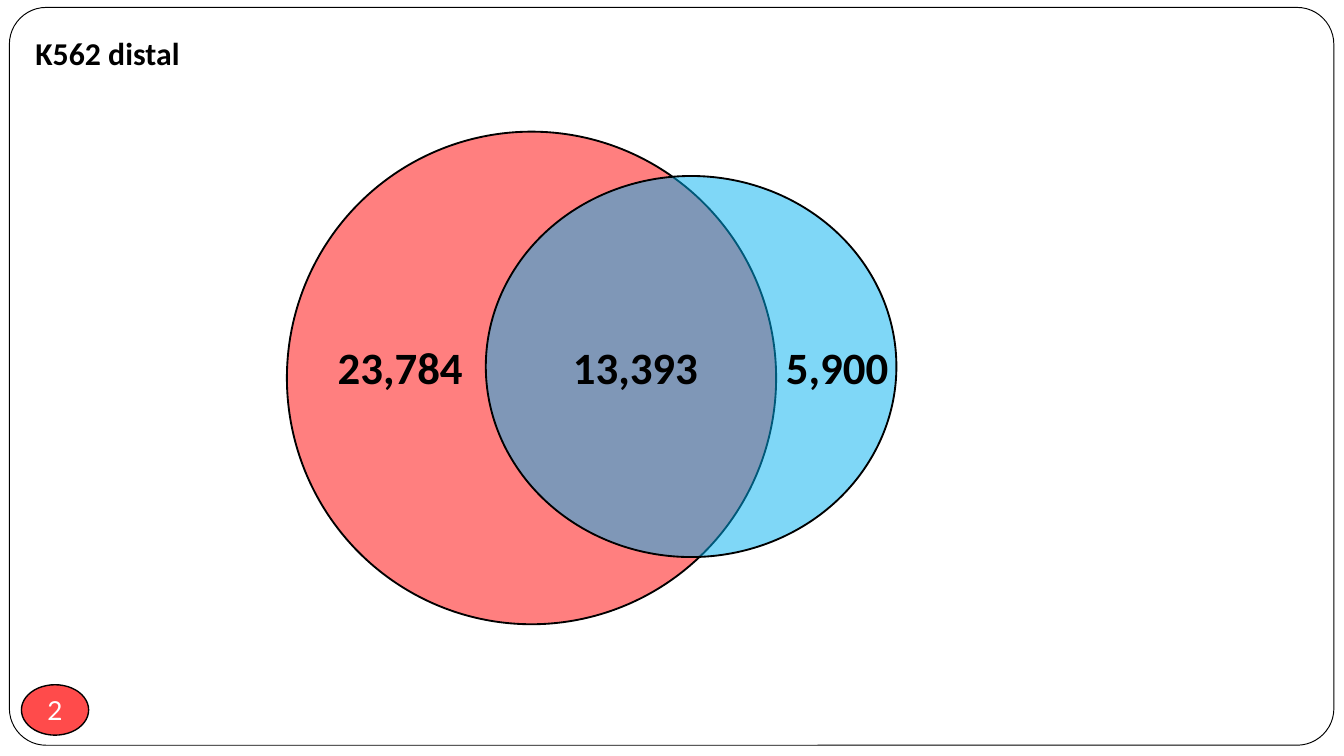
from lxml import etree
from pptx import Presentation
from pptx import util as u
from pptx.dml.color import RGBColor
from pptx.enum import shapes, text
from pptx.oxml.ns import qn

PX = 4572
BLACK = RGBColor(0x00, 0x00, 0x00)
WHITE = RGBColor(0xFF, 0xFF, 0xFF)
RED = RGBColor(0xFF, 0x00, 0x00)
BLUE = RGBColor(0x00, 0xB0, 0xF0)
BADGE_RED = RGBColor(0xFF, 0x4B, 0x4B)


class SlideBuilder:
    """Draws styled elements on the current slide, with 200 px to the inch."""

    def __init__(self, page, font="Calibri", badge_font="Lato"):
        self.page = page
        self.font = font
        self.badge_font = badge_font

    def shape(self, kind, bounds, fill, line_width, opacity=100):
        shape = self.page.shapes.add_shape(kind, *(n * PX for n in bounds))
        shape.shadow.inherit = False
        shape.fill.solid()
        shape.fill.fore_color.rgb = fill
        shape.line.color.rgb = BLACK
        shape.line.width = u.Pt(line_width)
        if opacity < 100:
            color = shape.element.spPr.find(qn("a:solidFill")).find(qn("a:srgbClr"))
            etree.SubElement(color, qn("a:alpha"), val=str(opacity * 1000))
        return shape

    def frame(self, bounds, corner):
        frame = self.shape(shapes.MSO_SHAPE.ROUNDED_RECTANGLE, bounds, WHITE, 0.5)
        frame.adjustments[0] = corner

    def circle(self, bounds, fill):
        self.shape(shapes.MSO_SHAPE.OVAL, bounds, fill, 1, opacity=50)

    def badge(self, bounds, words):
        badge = self.shape(shapes.MSO_SHAPE.OVAL, bounds, BADGE_RED, 0.75)
        frame = badge.text_frame
        frame.margin_left = frame.margin_right = 0
        frame.margin_top = frame.margin_bottom = 0
        frame.vertical_anchor = text.MSO_ANCHOR.MIDDLE
        frame.word_wrap = False
        para = frame.paragraphs[0]
        para.alignment = text.PP_ALIGN.CENTER
        self.span(para, words, self.badge_font, 14, WHITE)

    def label(self, bounds, words, size):
        box = self.page.shapes.add_textbox(*(n * PX for n in bounds))
        box.text_frame.word_wrap = False
        box.text_frame.auto_size = text.MSO_AUTO_SIZE.SHAPE_TO_FIT_TEXT
        self.span(box.text_frame.paragraphs[0], words, self.font, size, BLACK, bold=True)

    def span(self, para, words, font, size, color, bold=False):
        span = para.add_run()
        span.text = words
        span.font.name = font
        span.font.size = u.Pt(size)
        span.font.bold = bold
        span.font.color.rgb = color


def main():
    deck = Presentation()
    deck.slide_width, deck.slide_height = 2000 * PX, 1125 * PX
    builder = SlideBuilder(deck.slides.add_slide(deck.slide_layouts[6]))

    builder.frame((14, 11, 1971, 1098), 0.05)
    builder.badge((32, 1019, 100, 75), "2")
    builder.circle((427, 196, 728, 733), RED)
    builder.circle((723, 262, 611, 567), BLUE)
    for left, width, count in (
        (833, 228, "13,393"),
        (1150, 194, "5,900"),
        (483, 228, "23,784"),
    ):
        builder.label((left, 496, width, 100), count, 24)
    builder.label((33, 40, 256, 78), "K562 distal", 17)

    deck.save("out.pptx")


if __name__ == "__main__":
    main()
